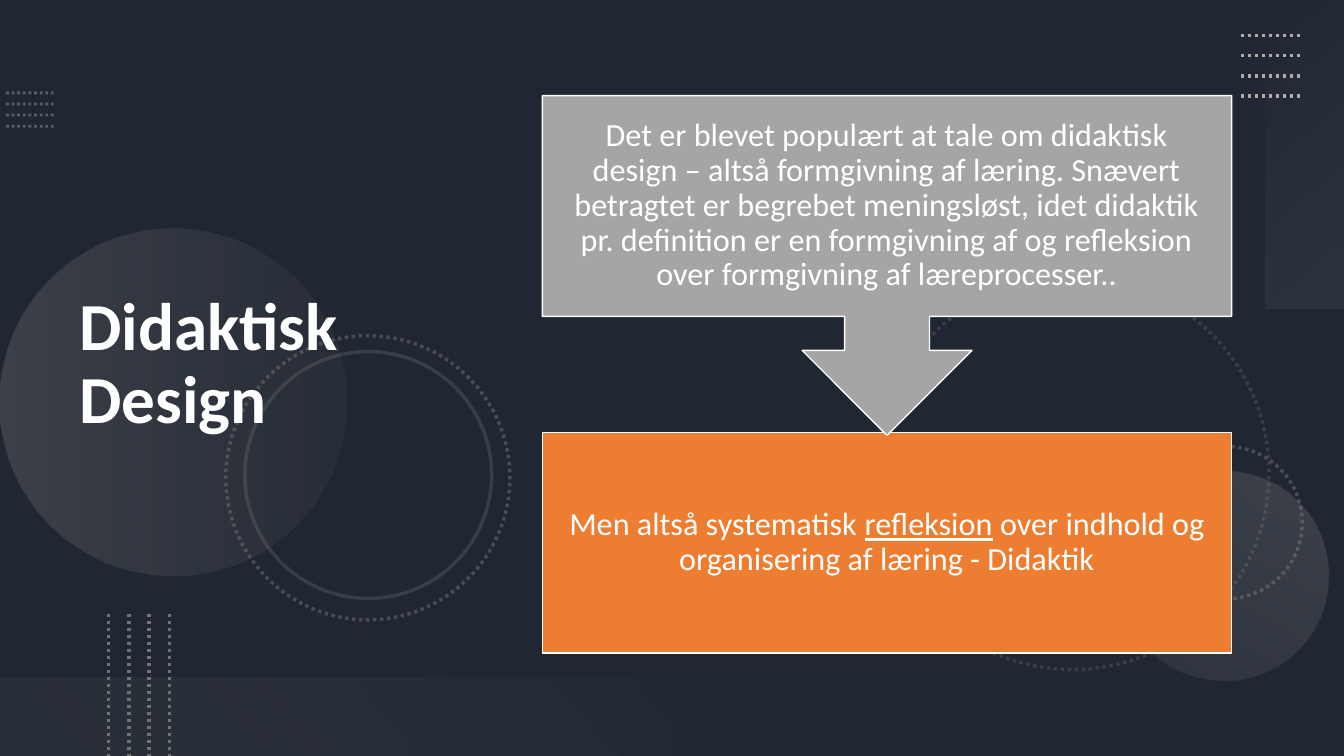
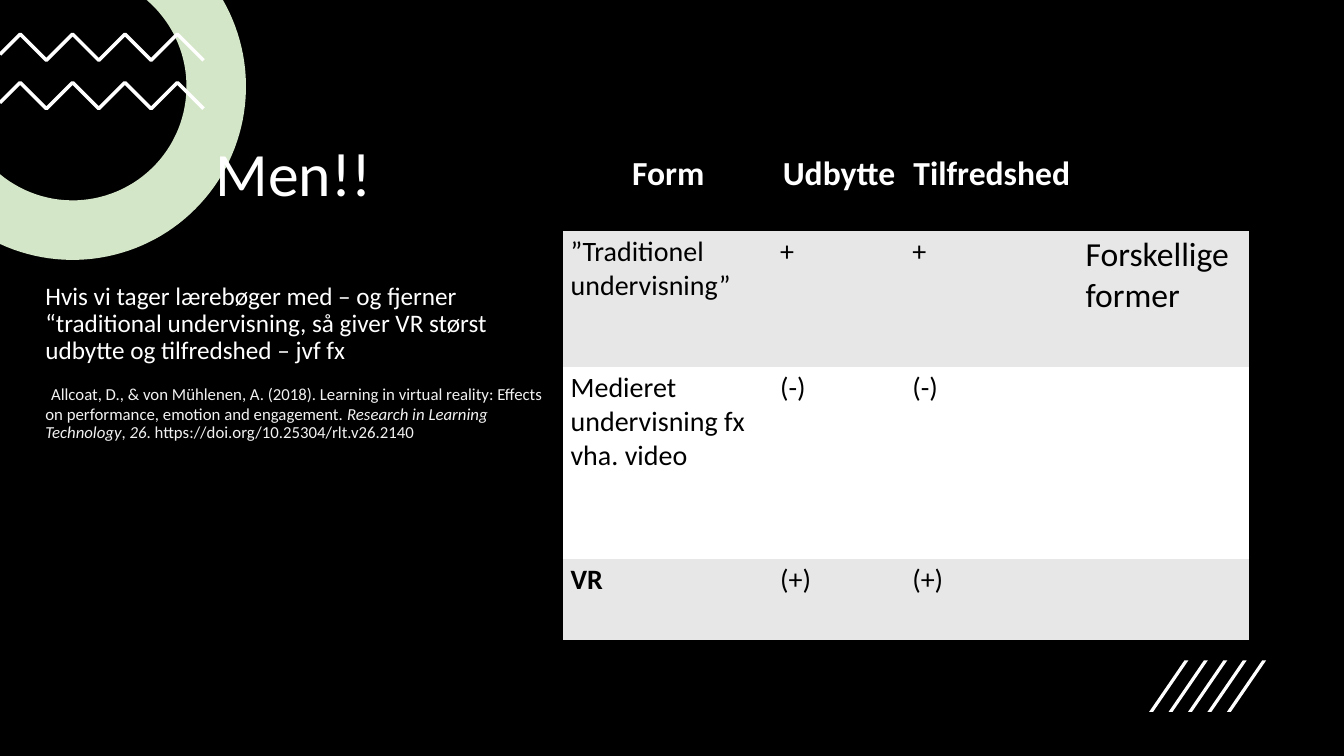
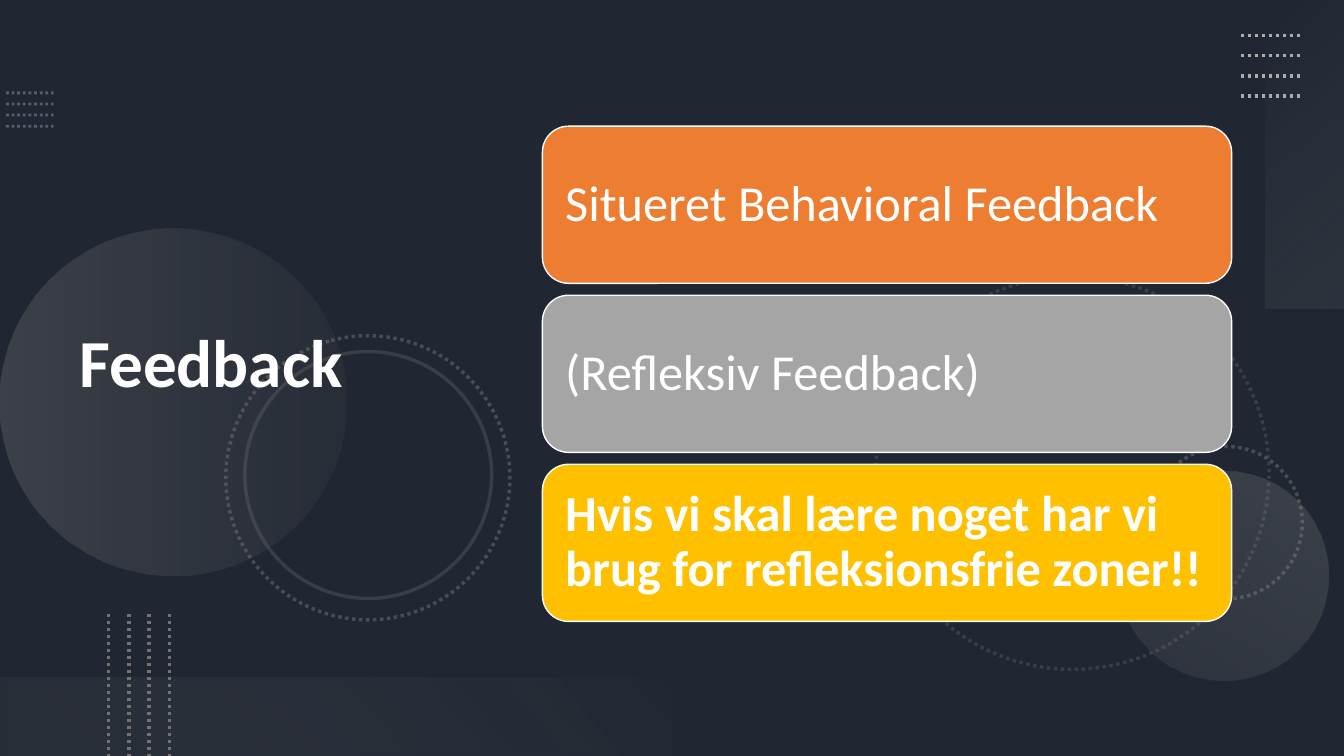
from dataclasses import dataclass
from math import acos, asin, cos, sin

from lxml import etree
from pptx import Presentation
from pptx.dml import color
from pptx.enum import dml, shapes, text
from pptx.oxml import ns, parse_xml
from pptx.util import Cm, Pt


@dataclass(frozen=True)
class Theme:
    font: str = "Calibri"
    night: str = "202732"
    black: str = "000000"
    white: str = "FFFFFF"
    pale: str = "F2F2F2"
    band: str = "E7E7E7"
    blue: str = "8497B0"
    silver: str = "AFABAB"
    stone: str = "767171"
    grey: str = "A5A5A5"
    orange: str = "ED7D31"
    yellow: str = "FFC000"
    green: str = "D4E6C8"
    title: int = 48
    heading: int = 44
    card: int = 36
    table_head: int = 24
    box: int = 23
    table: int = 20
    body: int = 18
    source: int = 12


THEME = Theme()
KIND = shapes.MSO_SHAPE
LEFT, CENTER = text.PP_ALIGN.LEFT, text.PP_ALIGN.CENTER
TOP, MIDDLE, BOTTOM = (text.MSO_ANCHOR.TOP, text.MSO_ANCHOR.MIDDLE,
                       text.MSO_ANCHOR.BOTTOM)
PLAIN_TABLE = "{2D5ABB26-0587-4C30-8999-92F81FD0307C}"


def rgb(value):
    return color.RGBColor.from_string(value)


def set_opacity(shape, percent):
    for node in shape.element.iter(ns.qn("a:srgbClr")):
        etree.SubElement(node, ns.qn("a:alpha"), val=str(percent * 1000))


class Deck:
    """Holds the presentation, its theme and the current slide."""

    def __init__(self, theme):
        self.theme = theme
        self.presentation = Presentation()
        self.presentation.slide_width = Cm(33.87)
        self.presentation.slide_height = Cm(19.05)
        self.slide = None

    def new_slide(self, layout, background):
        layouts = self.presentation.slide_layouts
        self.slide = self.presentation.slides.add_slide(layouts.get_by_name(layout))
        fill = self.slide.background.fill
        fill.solid()
        fill.fore_color.rgb = rgb(background)

    # Text
    def style(self, paragraph, size, colour=None, bold=False, align=LEFT, spacing=0.9):
        paragraph.alignment = align
        paragraph.line_spacing = spacing
        font = paragraph.font
        font.name, font.size, font.bold = self.theme.font, Pt(size), bold
        font.color.rgb = rgb(colour or self.theme.white)

    def set_text(self, paragraph, runs, size, **style):
        """Fill a paragraph; runs is a string or a list of (text, font settings)."""
        self.style(paragraph, size, **style)
        for words, settings in [(runs, {})] if isinstance(runs, str) else runs:
            run = paragraph.add_run()
            run.text = words
            for name, value in settings.items():
                setattr(run.font, name, value)

    def frame(self, shape, anchor, inset=None):
        frame = shape.text_frame
        frame.word_wrap = True
        frame.auto_size = text.MSO_AUTO_SIZE.NONE
        frame.vertical_anchor = anchor
        if inset is not None:
            frame.margin_left = frame.margin_right = Cm(inset)
            frame.margin_top = frame.margin_bottom = Cm(inset)
        return frame

    def place(self, placeholder, box, anchor):
        """Move a placeholder, bring it to the front and return its frame."""
        placeholder.left, placeholder.top, placeholder.width, placeholder.height = map(Cm, box)
        placeholder.element.getparent().append(placeholder.element)
        return self.frame(placeholder, anchor)

    def title(self, words, box, size, bold=False, anchor=MIDDLE):
        frame = self.place(self.slide.shapes.title, box, anchor)
        self.set_text(frame.paragraphs[0], words, size, bold=bold)

    def body(self, paragraphs, box):
        frame = self.place(self.slide.placeholders[1], box, TOP)
        for index, (runs, size, colour) in enumerate(paragraphs):
            paragraph = frame.add_paragraph() if index else frame.paragraphs[0]
            self.set_text(paragraph, runs, size, colour=colour)
            paragraph.space_before = Pt(10)
            properties = paragraph._p.get_or_add_pPr()
            properties.set("marL", "0")
            properties.set("indent", "0")
            properties.insert_element_before(
                parse_xml(f"<a:buNone {ns.nsdecls('a')}/>"), "a:tabLst", "a:defRPr")

    # Shapes and lines
    def paint(self, shape, fill=None, line=None, width=1):
        shape.shadow.inherit = False
        for target, value in ((shape.fill, fill), (shape.line.fill, line)):
            if value:
                target.solid()
                target.fore_color.rgb = rgb(value)
            else:
                target.background()
        if line:
            shape.line.width = Pt(width)
        return shape

    def shape(self, kind, box, rotation=0, **paint):
        shape = self.slide.shapes.add_shape(kind, *map(Cm, box))
        shape.rotation = rotation
        return self.paint(shape, **paint)

    def box(self, kind, box, fill, runs, size, inset, **style):
        shape = self.shape(kind, box, fill=fill, line=self.theme.white)
        frame = self.frame(shape, MIDDLE, inset)
        self.set_text(frame.paragraphs[0], runs, size, **style)

    def gradient(self, kind, box, rotation, angle, stops):
        """Stops are (position, colour, opacity), all in percent."""
        shape = self.shape(kind, box, rotation)
        items = "".join(
            f'<a:gs pos="{position * 1000}"><a:srgbClr val="{colour}">'
            f'<a:alpha val="{opacity * 1000}"/></a:srgbClr></a:gs>'
            for position, colour, opacity in stops)
        gradient = parse_xml(
            f'<a:gradFill {ns.nsdecls("a")} rotWithShape="1"><a:gsLst>{items}</a:gsLst>'
            f'<a:lin ang="{angle * 60000}" scaled="0"/></a:gradFill>')
        properties = shape.element.spPr
        properties.replace(properties.find(ns.qn("a:noFill")), gradient)

    def ring(self, left, top, size, opacity, rotation=75, dotted=True):
        ring = self.shape(KIND.OVAL, (left, top, size, size), rotation,
                          line=self.theme.stone, width=2.5)
        if dotted:
            ring.line.dash_style = dml.MSO_LINE.ROUND_DOT
        set_opacity(ring, opacity)

    def dotted_line(self, start, end, colour, width=2.5, opacity=100):
        line = self.slide.shapes.add_connector(
            shapes.MSO_CONNECTOR.STRAIGHT, *map(Cm, (*start, *end)))
        line.line.color.rgb = rgb(colour)
        line.line.width = Pt(width)
        line.line.dash_style = dml.MSO_LINE.ROUND_DOT
        etree.SubElement(line.element.spPr, ns.qn("a:effectLst"))
        set_opacity(line, opacity)

    def outline(self, points, closed, **paint):
        points = [(Cm(x), Cm(y)) for x, y in points]
        builder = self.slide.shapes.build_freeform(*points[0])
        builder.add_line_segments(points[1:], close=closed)
        self.paint(builder.convert_to_shape(), **paint)

    # Table
    def table(self, box, widths, heights, rows):
        theme = self.theme
        holder = self.slide.shapes.add_table(len(rows), len(widths), *map(Cm, box))
        next(holder.element.iter(ns.qn("a:tableStyleId"))).text = PLAIN_TABLE
        table = holder.table
        for column, width in zip(table.columns, widths):
            column.width = Cm(width)
        for row, height in zip(table.rows, heights):
            row.height = Cm(height)
        for row_index, row in enumerate(rows):
            head = row_index == 0
            fill = theme.black if head else theme.band if row_index % 2 else theme.white
            for column_index, words in enumerate(row):
                cell = table.cell(row_index, column_index)
                cell.fill.solid()
                cell.fill.fore_color.rgb = rgb(fill)
                cell.margin_left = cell.margin_right = Cm(0.18)
                cell.margin_top = cell.margin_bottom = Cm(0.1)
                large = head or column_index == 3
                self.set_text(cell.text_frame.paragraphs[0], words,
                              theme.table_head if large else theme.table,
                              colour=theme.white if head else theme.black,
                              bold=head or words == "VR",
                              align=CENTER if head else LEFT, spacing=1)

    # Shared backdrop of circles, dots and faint panels
    def circle_slide(self, title):
        theme = self.theme
        self.new_slide("Title Only", theme.night)
        for row in range(4):
            y = 2.34 + 0.28 * row
            self.dotted_line((0.15, y), (1.35, y), theme.blue, width=2, opacity=50)
        self.ring(22.07, 6.96, 9.91, opacity=30)
        self.ring(28.98, 11.25, 3.84, opacity=50, rotation=270)
        self.gradient(KIND.OVAL, (0, 5.77, 8.74, 8.74), 270, 90,
                      [(0, theme.silver, 20), (100, theme.stone, 10)])
        self.gradient(KIND.OVAL, (28.19, 11.86, 5.28, 5.28), 210, 90,
                      [(0, theme.silver, 10), (100, theme.silver, 20)])
        self.ring(5.69, 8.46, 7.16, opacity=50)
        self.ring(6.17, 8.86, 6.22, opacity=30, dotted=False)
        self.gradient(KIND.RECTANGLE, (29.01, 2.9, 7.77, 1.98), 270, 140,
                      [(0, theme.pale, 0), (100, theme.silver, 10)])
        self.gradient(KIND.RECTANGLE, (0, 17.07, 16.94, 1.98), 180, 140,
                      [(10, theme.stone, 10), (100, theme.pale, 0)])
        for index in range(4):
            x, y = 2.74 + 0.51 * index, 0.89 + 0.51 * index
            self.dotted_line((31.27, y), (32.79, y), theme.silver)
            self.dotted_line((x, 15.47), (x, 19.05), theme.stone)
        self.title(title, (1.75, 1.37, 11.66, 15.67), theme.title, bold=True)

    # Corner ornaments of the black slide
    def cut_ring(self, x, y, outer, inner):
        """A ring round (x, y), cut off at the left and top slide edges."""
        def arc(radius, steps=60):
            start, end = asin(-y / radius), acos(-x / radius)
            angles = [start + (end - start) * step / steps for step in range(steps + 1)]
            return [(x + radius * cos(a), y + radius * sin(a)) for a in angles]
        self.outline(arc(outer) + arc(inner)[::-1], True, fill=self.theme.green)

    def zigzag(self, top):
        points = [(0, top + 0.51)]
        points += [(0.51 + 0.66 * i, top + 0.66 * (i % 2)) for i in range(8)]
        self.outline(points, False, line=self.theme.white, width=2.5)

    def slashes(self):
        for index in range(5):
            slash = self.shape(KIND.PARALLELOGRAM, (28.96 + 0.49 * index, 16.64, 0.99, 1.3),
                               fill=self.theme.white)
            slash.adjustments[0] = 0.9


def build_design(deck):
    theme = deck.theme
    deck.circle_slide("Didaktisk Design")
    deck.box(KIND.RECTANGLE, (13.67, 10.9, 17.37, 5.56), theme.orange,
             [("Men altså systematisk ", {}), ("refleksion", {"underline": True}),
              (" over indhold og organisering af læring - Didaktik", {})],
             theme.box, 0.46, align=CENTER)
    deck.box(KIND.DOWN_ARROW_CALLOUT, (13.67, 2.41, 17.37, 8.56), theme.grey,
             "Det er blevet populært at tale om didaktisk design – altså formgivning "
             "af læring. Snævert betragtet er begrebet meningsløst, idet didaktik pr. "
             "definition er en formgivning af og refleksion over formgivning af "
             "læreprocesser..", theme.box, 0.46, align=CENTER)


def build_comparison(deck):
    theme = deck.theme
    deck.new_slide("Title and Content", theme.black)
    deck.cut_ring(1.83, 2.18, outer=4.37, inner=2.87)
    for top in (0.86, 2.08):
        deck.zigzag(top)
    deck.title("Men!!", (5.18, 1.75, 13.44, 3.66), theme.heading, anchor=BOTTOM)
    deck.body([
        ("Hvis vi tager lærebøger med – og fjerner “traditional undervisning, "
         "så giver VR størst udbytte og tilfredshed – jvf fx", theme.body, theme.white),
        ([(" ", {"size": Pt(theme.body)}),
          ("Allcoat, D., & von Mühlenen, A. (2018). Learning in virtual reality: "
           "Effects on performance, emotion and engagement. ", {}),
          ("Research in Learning Technology", {"italic": True}), (", ", {}),
          ("26", {"italic": True}), (". https://doi.org/10.25304/rlt.v26.2140", {})],
         theme.source, theme.pale),
    ], (0.89, 7.01, 13.44, 11.23))
    deck.slashes()
    deck.table((14.2, 3.78, 17.27, 12.34), (5.28, 3.33, 4.37, 4.29),
               (2.03, 3.43, 4.85, 2.03),
               [("Form", "Udbytte", "Tilfredshed", ""),
                ("”Traditionel undervisning”", "+", "+", "Forskellige former"),
                ("Medieret undervisning fx vha. video", "(-)", "(-)", ""),
                ("VR", "(+)", "(+)", "")])


def build_feedback(deck):
    theme = deck.theme
    deck.circle_slide("Feedback")
    cards = [("Situeret Behavioral Feedback", theme.orange, False),
             ("(Refleksiv Feedback)", theme.grey, False),
             ("Hvis vi skal lære noget har vi brug for refleksionsfrie zoner!!",
              theme.yellow, True)]
    for index, (words, fill, bold) in enumerate(cards):
        deck.box(KIND.ROUNDED_RECTANGLE, (13.67, 3.18 + 4.26 * index, 17.37, 3.96),
                 fill, words, theme.card, 0.38, bold=bold)


def main():
    deck = Deck(THEME)
    build_design(deck)
    build_comparison(deck)
    build_feedback(deck)
    deck.presentation.save("out.pptx")


if __name__ == "__main__":
    main()
